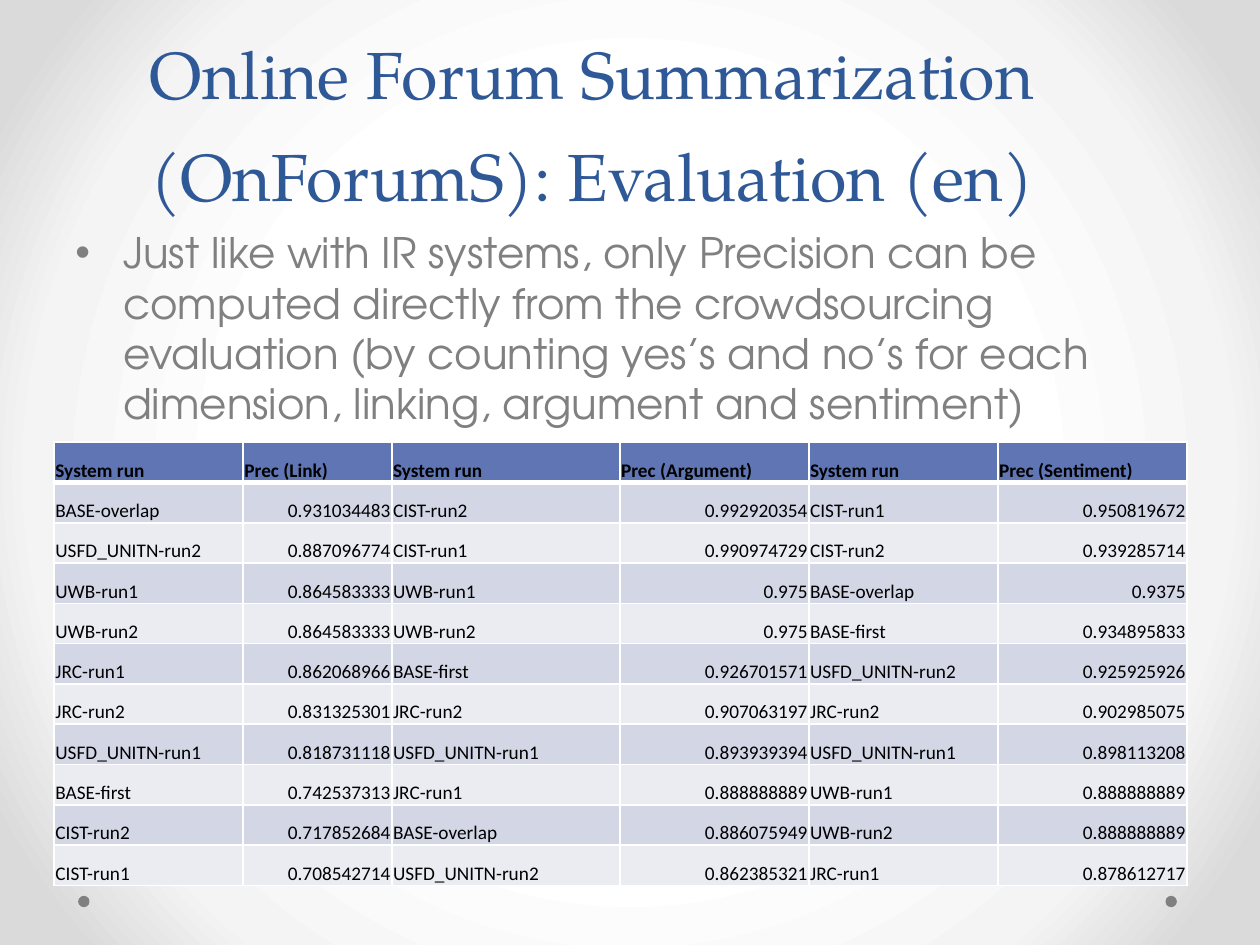
from lxml.etree import SubElement
from pptx import Presentation
from pptx.dml.color import RGBColor
from pptx.enum.shapes import MSO_SHAPE
from pptx.enum.text import MSO_ANCHOR, PP_ALIGN
from pptx.oxml import parse_xml
from pptx.oxml.ns import nsdecls, qn
from pptx.util import Inches, Pt

HEADER = ["System run", "Prec (Link)", "System run", "Prec (Argument)",
          "System run", "Prec (Sentiment)"]
RESULTS = [
    ["BASE-overlap", "0.931034483", "CIST-run2", "0.992920354", "CIST-run1", "0.950819672"],
    ["USFD_UNITN-run2", "0.887096774", "CIST-run1", "0.990974729", "CIST-run2", "0.939285714"],
    ["UWB-run1", "0.864583333", "UWB-run1", "0.975", "BASE-overlap", "0.9375"],
    ["UWB-run2", "0.864583333", "UWB-run2", "0.975", "BASE-first", "0.934895833"],
    ["JRC-run1", "0.862068966", "BASE-first", "0.926701571", "USFD_UNITN-run2", "0.925925926"],
    ["JRC-run2", "0.831325301", "JRC-run2", "0.907063197", "JRC-run2", "0.902985075"],
    ["USFD_UNITN-run1", "0.818731118", "USFD_UNITN-run1", "0.893939394",
     "USFD_UNITN-run1", "0.898113208"],
    ["BASE-first", "0.742537313", "JRC-run1", "0.888888889", "UWB-run1", "0.888888889"],
    ["CIST-run2", "0.717852684", "BASE-overlap", "0.886075949", "UWB-run2", "0.888888889"],
    ["CIST-run1", "0.708542714", "USFD_UNITN-run2", "0.862385321", "JRC-run1", "0.878612717"],
]
COLUMN_WIDTHS = [1.5, 1.18, 1.81, 1.5, 1.5, 1.5]
ROW_HEIGHT = 0.32


def rgb(hex_color):
    return RGBColor.from_string(hex_color)


def write(frame, text, *, font, size, color, bold=False, align=PP_ALIGN.LEFT,
          anchor=MSO_ANCHOR.TOP, line_spacing=None, bullet=None, indent=0.38):
    frame.word_wrap = True
    frame.vertical_anchor = anchor
    paragraph = frame.paragraphs[0]
    paragraph.alignment = align
    if line_spacing:
        paragraph.line_spacing = Pt(line_spacing)
    if bullet:
        properties = paragraph._p.get_or_add_pPr()
        properties.set("marL", str(Inches(indent)))
        properties.set("indent", str(-Inches(indent)))
        SubElement(properties, qn("a:buFont"), typeface="Arial")
        SubElement(properties, qn("a:buChar"), char=bullet)
    run = paragraph.add_run()
    run.text = text
    run.font.name = font
    run.font.size = Pt(size)
    run.font.bold = bold
    run.font.color.rgb = rgb(color)


def set_borders(cell, color, bottom_width):
    properties = cell._tc.get_or_add_tcPr()
    widths = {"lnL": 1, "lnR": 1, "lnT": 1, "lnB": bottom_width}
    for position, (side, width) in enumerate(widths.items()):
        properties.insert(position, parse_xml(
            f'<a:{side} {nsdecls("a")} w="{Pt(width)}"><a:solidFill>'
            f'<a:srgbClr val="{color}"/></a:solidFill></a:{side}>'))


class ForumSlide:
    heading_font = "TeX Gyre Pagella"
    body_font = "TeX Gyre Adventor"
    table_font = "Calibri"
    blue, gray, white, black = "2F5897", "808080", "FFFFFF", "000000"
    header_fill = "6076B4"
    band_fills = ("D2D6E5", "EAECF2")

    def __init__(self, presentation):
        self.slide = presentation.slides.add_slide(presentation.slide_layouts[6])

    def radial_background(self, stops):
        self.slide.background.fill.solid()
        background = self.slide.element.find(".//" + qn("p:bgPr"))
        stop_xml = "".join(
            f'<a:gs pos="{percent * 1000}"><a:srgbClr val="{color}"/></a:gs>'
            for percent, color in stops)
        background.replace(background[0], parse_xml(
            f'<a:gradFill {nsdecls("a")} rotWithShape="1"><a:gsLst>{stop_xml}</a:gsLst>'
            '<a:path path="circle"><a:fillToRect l="50000" t="50000" r="50000" b="50000"/>'
            '</a:path></a:gradFill>'))

    def dot(self, left, top, diameter=0.09):
        circle = self.slide.shapes.add_shape(
            MSO_SHAPE.OVAL, Inches(left), Inches(top), Inches(diameter), Inches(diameter))
        circle.shadow.inherit = False
        circle.fill.solid()
        circle.fill.fore_color.rgb = rgb(self.gray)
        circle.line.fill.background()

    def text(self, content, left, top, width, height, **text_format):
        box = self.slide.shapes.add_textbox(
            Inches(left), Inches(top), Inches(width), Inches(height))
        write(box.text_frame, content, **text_format)

    def title(self, content):
        self.text(content, 0.2, 0, 9, 1.75, font=self.heading_font, size=38,
                  color=self.blue, align=PP_ALIGN.CENTER, anchor=MSO_ANCHOR.BOTTOM,
                  line_spacing=58)

    def bullet(self, content):
        self.text(content, 0.5, 1.75, 9, 4.91, font=self.body_font, size=24,
                  color=self.gray, bullet="•")

    def table(self, rows, left, top):
        table = self.slide.shapes.add_table(
            len(rows), len(COLUMN_WIDTHS), Inches(left), Inches(top),
            Inches(sum(COLUMN_WIDTHS)), Inches(ROW_HEIGHT * len(rows))).table
        for column, width in zip(table.columns, COLUMN_WIDTHS):
            column.width = Inches(width)
        for row_index, values in enumerate(rows):
            table.rows[row_index].height = Inches(ROW_HEIGHT)
            for column_index, value in enumerate(values):
                self.table_cell(table.cell(row_index, column_index), value,
                                row_index, is_score=column_index % 2 == 1)

    def table_cell(self, cell, value, row_index, is_score):
        is_header = row_index == 0
        cell.margin_left = cell.margin_right = cell.margin_top = Inches(0.01)
        cell.margin_bottom = 0
        cell.vertical_anchor = MSO_ANCHOR.BOTTOM
        cell.fill.solid()
        cell.fill.fore_color.rgb = rgb(
            self.header_fill if is_header else self.band_fills[(row_index - 1) % 2])
        set_borders(cell, self.white, bottom_width=3 if is_header else 1)
        write(cell.text_frame, value, font=self.table_font, size=11, color=self.black,
              bold=is_header, anchor=None,
              align=PP_ALIGN.RIGHT if is_score and not is_header else PP_ALIGN.LEFT)


def main():
    presentation = Presentation()
    presentation.slide_width, presentation.slide_height = Inches(10), Inches(7.5)
    evaluation = ForumSlide(presentation)
    evaluation.radial_background([(50, "FFFFFF"), (76, "F4F4F4"), (92, "DADADA")])
    for left in (9.25, 0.62):
        evaluation.dot(left, 7.11)
    evaluation.title("Online Forum Summarization (OnForumS): Evaluation (en)")
    evaluation.bullet(
        "Just like with IR systems, only Precision can be computed directly from the "
        "crowdsourcing evaluation (by counting yes’s and no’s for each dimension, "
        "linking, argument and sentiment)")
    evaluation.table([HEADER] + RESULTS, 0.43, 3.51)
    presentation.save("out.pptx")


if __name__ == "__main__":
    main()
